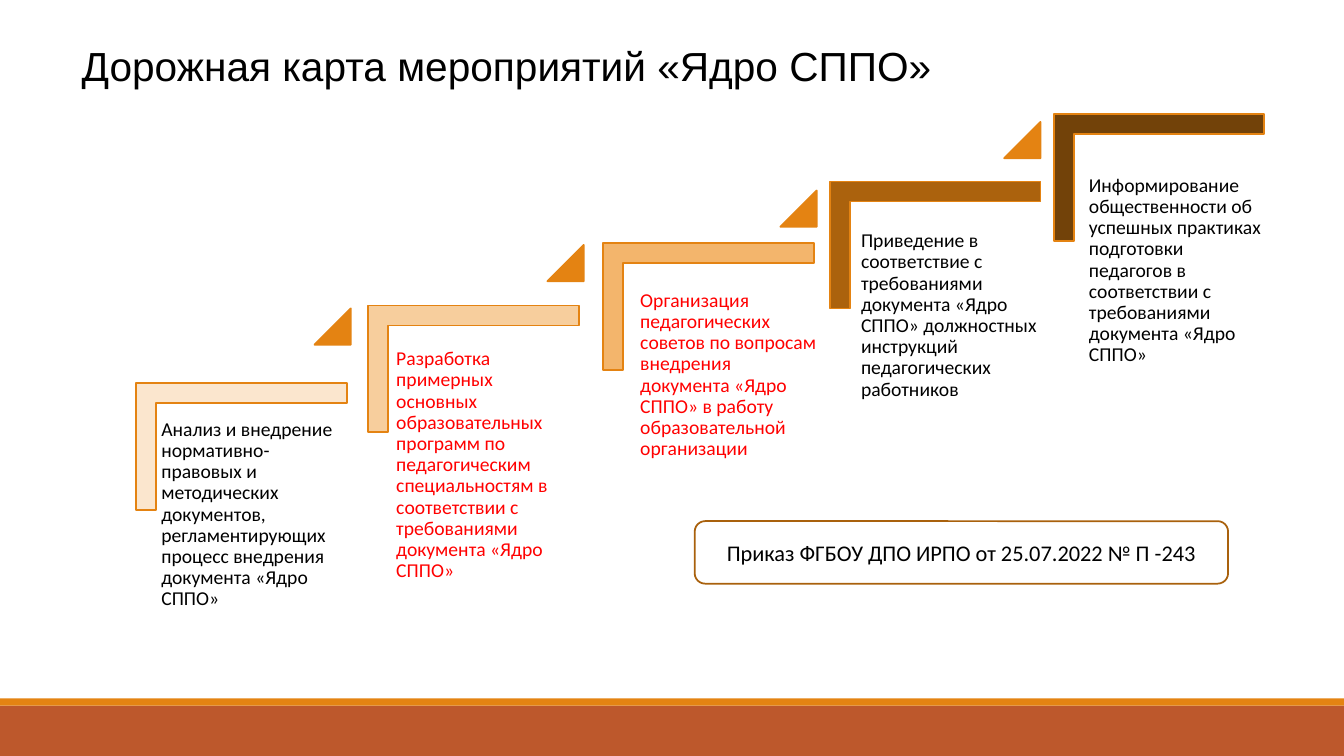
from pptx import Presentation
from pptx.dml.color import RGBColor
from pptx.enum.shapes import MSO_SHAPE
from pptx.enum.text import MSO_ANCHOR, PP_ALIGN
from pptx.util import Inches, Pt

RECT, ROUND = MSO_SHAPE.RECTANGLE, MSO_SHAPE.ROUNDED_RECTANGLE
WEDGE = MSO_SHAPE.ISOSCELES_TRIANGLE
TOP, MIDDLE = MSO_ANCHOR.TOP, MSO_ANCHOR.MIDDLE
LEFT, CENTER = PP_ALIGN.LEFT, PP_ALIGN.CENTER

BLACK = RGBColor(0x00, 0x00, 0x00)
RED = RGBColor(0xFF, 0x00, 0x00)
ORANGE = RGBColor(0xE4, 0x83, 0x12)
RUST = RGBColor(0xBD, 0x58, 0x2C)
BROWN = RGBColor(0xA9, 0x61, 0x0D)
TINTS = [RGBColor(0xFB, 0xE6, 0xCE), RGBColor(0xF7, 0xCE, 0x9D),
         RGBColor(0xF3, 0xB5, 0x6C), RGBColor(0xAB, 0x62, 0x0D),
         RGBColor(0x72, 0x42, 0x09)]

WIDE, HIGH = 13.33, 7.5
ARM, DROP, THICK = 2.09, 1.26, 0.2  # a step's corner
SIDE = 0.36                         # size of the wedge between steps

# Corner left and top, text offset, wedge offset, text colour, text
STEPS = [
    ((1.35, 3.8), (0.19, 0.3), (1.77, -0.74), BLACK,
     "Анализ и внедрение нормативно-правовых и методических документов, "
     "регламентирующих процесс внедрения документа «Ядро СППО»"),
    ((3.65, 3.03), (0.22, 0.37), (1.78, -0.6), RED,
     "Разработка примерных основных образовательных программ по "
     "педагогическим специальностям в соответствии с требованиями "
     "документа «Ядро СППО»"),
    ((5.98, 2.41), (0.31, 0.41), (1.76, -0.52), RED,
     "Организация педагогических советов по вопросам внедрения документа "
     "«Ядро СППО» в работу образовательной организации"),
    ((8.23, 1.8), (0.25, 0.43), (1.73, -0.59), BLACK,
     "Приведение в соответствие с требованиями документа «Ядро СППО» "
     "должностных инструкций педагогических работников"),
    ((10.45, 1.13), (0.29, 0.55), None, BLACK,
     "Информирование общественности об успешных практиках подготовки "
     "педагогов в соответствии с требованиями документа «Ядро СППО»"),
]


def paint(shape, fill=None, line=None):
    shape.shadow.inherit = False
    if fill is None:
        shape.fill.background()
    else:
        shape.fill.solid()
        shape.fill.fore_color.rgb = fill
    if line is None:
        shape.line.fill.background()
    else:
        shape.line.color.rgb = line
        shape.line.width = Pt(1.25)
    return shape


def draw(slide, kind, box, fill=None, line=None):
    return paint(slide.shapes.add_shape(kind, *map(Inches, box)), fill, line)


def write(shape, text, font, size, color=BLACK, anchor=TOP, align=LEFT,
          pad=(0.1, 0.05), pitch=1.0):
    frame = shape.text_frame
    frame.word_wrap = True
    frame.vertical_anchor = anchor
    frame.margin_left = frame.margin_right = Inches(pad[0])
    frame.margin_top = frame.margin_bottom = Inches(pad[1])
    para = frame.paragraphs[0]
    para.text = text
    para.alignment = align
    para.line_spacing = pitch
    para.font.name, para.font.size = font, Pt(size)
    para.font.color.rgb = color


def label(slide, box, text, *style, **more):
    write(slide.shapes.add_textbox(*map(Inches, box)), text, *style, **more)


def footer(slide, top, height):
    band = 0.07
    draw(slide, RECT, (0, top + band, WIDE, height - band), RUST)
    draw(slide, RECT, (0, top, WIDE, band), ORANGE)


def corner(slide, left, top, tint):
    ends = [(ARM, 0), (ARM, THICK), (THICK, THICK), (THICK, DROP), (0, DROP)]
    pen = slide.shapes.build_freeform(Inches(left), Inches(top))
    pen.add_line_segments([(Inches(left + x), Inches(top + y))
                           for x, y in ends])
    paint(pen.convert_to_shape(), tint, ORANGE)


def step(slide, spot, tint, shift, jump, color, text):
    left, top = spot
    corner(slide, left, top, tint)
    label(slide, (left + shift[0], top + shift[1], 1.89, 1.65), text,
          "Calibri", 14, color, pad=(0.06, 0.06), pitch=0.9)
    if jump:
        wedge = draw(slide, WEDGE, (left + jump[0], top + jump[1], SIDE, SIDE),
                     ORANGE, ORANGE)
        wedge.adjustments[0] = 1


def order(slide, box):
    note = draw(slide, ROUND, box, line=BROWN)
    write(note, "Приказ ФГБОУ ДПО ИРПО от 25.07.2022 № П -243",
          "Calibri", 16, anchor=MIDDLE, align=CENTER)


def main():
    deck = Presentation()
    deck.slide_width, deck.slide_height = Inches(WIDE), Inches(HIGH)
    slide = deck.slides.add_slide(deck.slide_layouts[6])

    # Footer and title
    footer(slide, 6.93, HIGH - 6.93)
    label(slide, (0.7, 0.31, 12.12, 0.73),
          "Дорожная карта мероприятий «Ядро СППО»", "Arial", 29,
          anchor=MIDDLE, pad=(0.11, 0.05), pitch=0.9)

    # Staircase
    for tint, (spot, *rest) in zip(TINTS, STEPS):
        step(slide, spot, tint, *rest)

    # Order note
    order(slide, (6.89, 5.17, 5.29, 0.62))
    deck.save("out.pptx")


if __name__ == "__main__":
    main()
